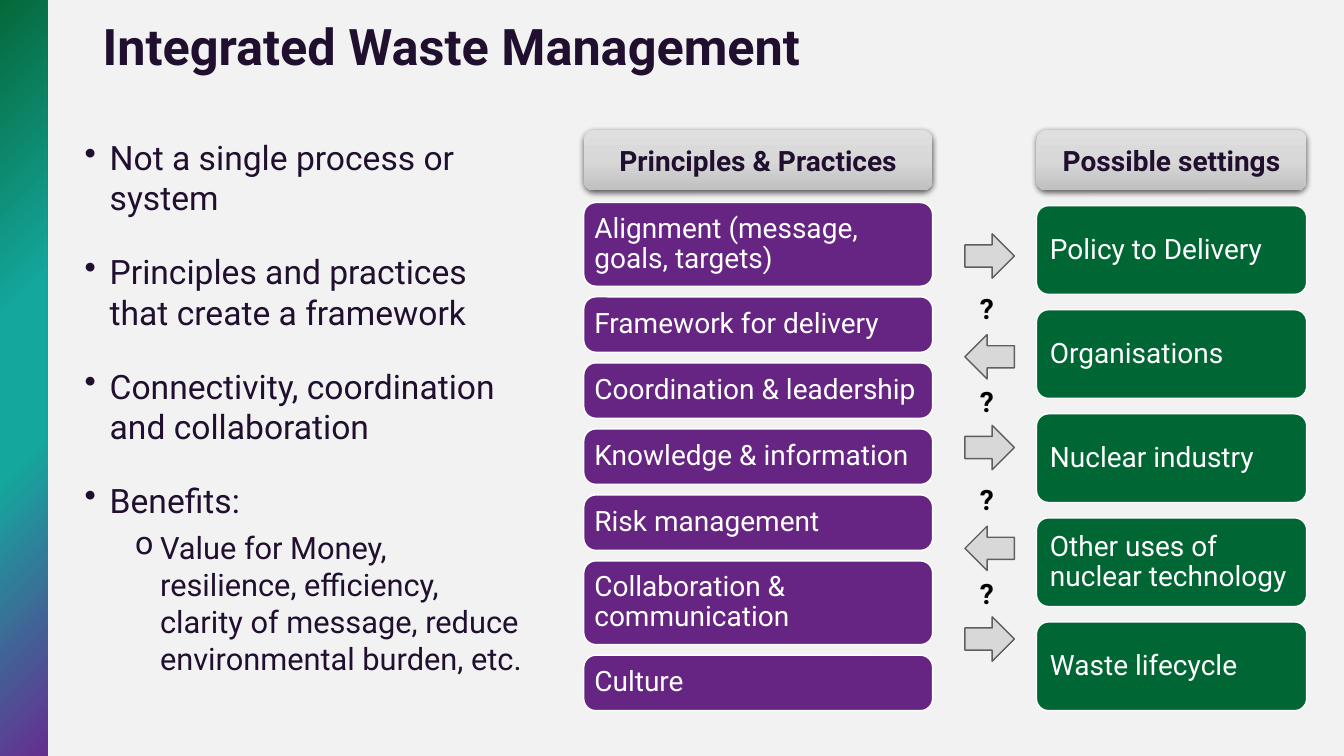
"""Build the Integrated Waste Management slide."""
from dataclasses import dataclass

from lxml import etree
from pptx import Presentation
from pptx.dml.color import RGBColor
from pptx.enum.shapes import MSO_SHAPE
from pptx.enum.text import MSO_ANCHOR, PP_ALIGN
from pptx.oxml import parse_xml
from pptx.oxml.ns import qn
from pptx.util import Inches, Pt

RECTANGLE, ROUNDED = MSO_SHAPE.RECTANGLE, MSO_SHAPE.ROUNDED_RECTANGLE
RIGHT_ARROW, LEFT_ARROW = MSO_SHAPE.RIGHT_ARROW, MSO_SHAPE.LEFT_ARROW
TOP, MIDDLE = MSO_ANCHOR.TOP, MSO_ANCHOR.MIDDLE
LEFT, CENTER = PP_ALIGN.LEFT, PP_ALIGN.CENTER
NAMESPACE = "http://schemas.openxmlformats.org/drawingml/2006/main"

TITLE = "Integrated Waste Management"
POINTS = [
    (0, "Not a single process or system"),
    (0, "Principles and practices that create a framework"),
    (0, "Connectivity, coordination and collaboration"),
    (0, "Benefits:"),
    (1, "Value for Money, resilience, efficiency, clarity of message, "
        "reduce environmental burden, etc."),
]
PRACTICES_HEADER = "Principles & Practices"
PRACTICES = [
    ("Alignment (message, goals, targets)", 2),
    ("Framework for delivery", 1),
    ("Coordination & leadership", 1),
    ("Knowledge & information", 1),
    ("Risk management", 1),
    ("Collaboration & communication", 2),
    ("Culture", 1),
]
SETTINGS_HEADER = "Possible settings"
SETTINGS = ["Policy to Delivery", "Organisations", "Nuclear industry",
            "Other uses of nuclear technology", "Waste lifecycle"]
ARROW_COUNT = 5


@dataclass(frozen=True)
class Theme:
    font: str = "Roboto"
    background: str = "F2F2F2"
    ink: str = "210F2F"
    white: str = "FFFFFF"
    black: str = "000000"
    purple: str = "662483"
    green: str = "006633"
    arrow: str = "D8D8D8"
    arrow_edge: str = "5F5F5F"
    side_stops: tuple = ((0, "662E91"), (40, "14A79D"), (60, "14A79D"), (100, "05683A"))
    header_stops: tuple = ((0, "DFDFDF"), (50, "D8D8D8"), (100, "C0C0C0"))
    title_size: int = 36
    point_sizes: tuple = (24, 22)
    label_size: int = 20


THEME = Theme()
WIDTH, HEIGHT = 13.33, 7.5
SIDE_WIDTH = 0.47
PRACTICE_LEFT, PRACTICE_WIDTH = 5.79, 3.46
SETTING_LEFT, SETTING_WIDTH = 10.28, 2.68
HEADER_TOP, HEADER_HEIGHT = 1.29, 0.6
PRACTICE_TOP, SETTING_TOP, COLUMN_BOTTOM = 2.01, 2.04, 7.05
PRACTICE_HEIGHTS = {1: 0.55, 2: 0.83}
SETTING_HEIGHT = 0.88
CORNER = 0.12
ARROW_LEFT, ARROW_WIDTH, ARROW_HEIGHT = 9.57, 0.49, 0.44
MARK_LEFT, MARK_WIDTH = 9.62, 0.39
PAIR_STEP = 1.9
ARROW_TOPS, MARK_TOPS = (2.32, 3.32), (2.84, 3.77)


def color(value):
    return RGBColor.from_string(value)


def write(para, text, size, tint, bold=False):
    span = para.add_run()
    span.text = text
    span.font.name = THEME.font
    span.font.size = Pt(size)
    span.font.bold = bold
    span.font.color.rgb = color(tint)


def add_text(page, place, anchor=TOP):
    frame = page.shapes.add_textbox(*map(Inches, place)).text_frame
    frame.word_wrap = True
    frame.vertical_anchor = anchor
    return frame


def add_box(page, kind, place, fill=None, edge=None):
    box = page.shapes.add_shape(kind, *map(Inches, place))
    box.shadow.inherit = False
    if fill:
        box.fill.solid()
        box.fill.fore_color.rgb = color(fill)
    if edge:
        box.line.color.rgb = color(edge)
        box.line.width = Pt(1)
    else:
        box.line.fill.background()
    return box


def set_gradient(box, stops, direction):
    marks = "".join(f'<a:gs pos="{share * 1000}"><a:srgbClr val="{tint}"/></a:gs>'
                    for share, tint in stops)
    gradient = parse_xml(f'<a:gradFill xmlns:a="{NAMESPACE}" rotWithShape="1">'
                         f'<a:gsLst>{marks}</a:gsLst>{direction}</a:gradFill>')
    box._element.spPr.find(qn("a:prstGeom")).addnext(gradient)


def add_side_band(page):
    band = add_box(page, RECTANGLE, (0, 0, SIDE_WIDTH, HEIGHT))
    set_gradient(band, THEME.side_stops,
                 '<a:path path="circle"><a:fillToRect l="100000" t="100000"/></a:path>')


def add_points(page):
    frame = add_text(page, (0.74, 1.31, 4.54, 5.59))
    for index, (level, text) in enumerate(POINTS):
        para = frame.paragraphs[0] if index == 0 else frame.add_paragraph()
        para.level = level
        properties = para._p.get_or_add_pPr()
        properties.set("marL", str(Inches(0.25 + 0.5 * level)))
        properties.set("indent", str(-Inches(0.25)))
        bullet = etree.SubElement(properties, qn("a:buChar"))
        bullet.set("char", "•o"[level])
        if index:
            para.space_before = Pt(3 if level else 12)
        opens_sublist = index + 1 < len(POINTS) and POINTS[index + 1][0] > level
        para.space_after = Pt(3 if opens_sublist else 12)
        write(para, text, THEME.point_sizes[level], THEME.ink)


def add_label(box, text, tint, align, inset, bold=False):
    frame = box.text_frame
    frame.word_wrap = True
    frame.vertical_anchor = MIDDLE
    frame.margin_left = frame.margin_right = Inches(inset)
    frame.margin_top = frame.margin_bottom = Inches(0.05)
    para = frame.paragraphs[0]
    para.alignment = align
    para.line_spacing = 1.0 if bold else 0.9
    write(para, text, THEME.label_size, tint, bold)


def add_card(page, place, text, fill, inset):
    card = add_box(page, ROUNDED, place, fill, THEME.white)
    card.adjustments[0] = CORNER / place[3]
    add_label(card, text, THEME.white, LEFT, inset)


def add_header(page, left, width, text):
    header = add_box(page, ROUNDED, (left, HEADER_TOP, width, HEADER_HEIGHT))
    set_gradient(header, THEME.header_stops, '<a:lin ang="5400000" scaled="0"/>')
    shadow = parse_xml(
        f'<a:outerShdw xmlns:a="{NAMESPACE}" blurRad="{Pt(4.5)}" dist="{Pt(1.5)}" '
        f'dir="5400000" rotWithShape="0"><a:srgbClr val="{THEME.black}">'
        '<a:alpha val="63000"/></a:srgbClr></a:outerShdw>')
    header._element.spPr.find(qn("a:effectLst")).append(shadow)
    add_label(header, text, THEME.ink, CENTER, 0.1, bold=True)


def add_practices(page):
    heights = [PRACTICE_HEIGHTS[lines] for _, lines in PRACTICES]
    gap = (COLUMN_BOTTOM - PRACTICE_TOP - sum(heights)) / (len(heights) - 1)
    top = PRACTICE_TOP
    for (text, _), height in zip(PRACTICES, heights):
        add_card(page, (PRACTICE_LEFT, top, PRACTICE_WIDTH, height), text, THEME.purple, 0.07)
        top += height + gap


def add_settings(page):
    step = (COLUMN_BOTTOM - SETTING_HEIGHT - SETTING_TOP) / (len(SETTINGS) - 1)
    for row, text in enumerate(SETTINGS):
        place = (SETTING_LEFT, SETTING_TOP + row * step, SETTING_WIDTH, SETTING_HEIGHT)
        add_card(page, place, text, THEME.green, 0.1)


def add_arrows(page):
    for index in range(ARROW_COUNT):
        pair, side = divmod(index, 2)
        top = ARROW_TOPS[side] + pair * PAIR_STEP
        add_box(page, (RIGHT_ARROW, LEFT_ARROW)[side],
                (ARROW_LEFT, top, ARROW_WIDTH, ARROW_HEIGHT), THEME.arrow, THEME.arrow_edge)
        if index < ARROW_COUNT - 1:
            top = MARK_TOPS[side] + pair * PAIR_STEP
            frame = add_text(page, (MARK_LEFT, top, MARK_WIDTH, ARROW_HEIGHT))
            write(frame.paragraphs[0], "?", THEME.label_size, THEME.black, bold=True)


def main():
    deck = Presentation()
    deck.slide_width, deck.slide_height = Inches(WIDTH), Inches(HEIGHT)
    page = deck.slides.add_slide(deck.slide_layouts[6])
    page.background.fill.solid()
    page.background.fill.fore_color.rgb = color(THEME.background)
    add_side_band(page)
    title = add_text(page, (0.92, 0.15, 9.47, 0.68), MIDDLE).paragraphs[0]
    title.line_spacing = 0.9
    write(title, TITLE, THEME.title_size, THEME.ink, bold=True)
    add_points(page)
    add_practices(page)
    add_settings(page)
    add_arrows(page)
    add_header(page, PRACTICE_LEFT, PRACTICE_WIDTH, PRACTICES_HEADER)
    add_header(page, SETTING_LEFT, SETTING_WIDTH, SETTINGS_HEADER)
    deck.save("out.pptx")


if __name__ == "__main__":
    main()
